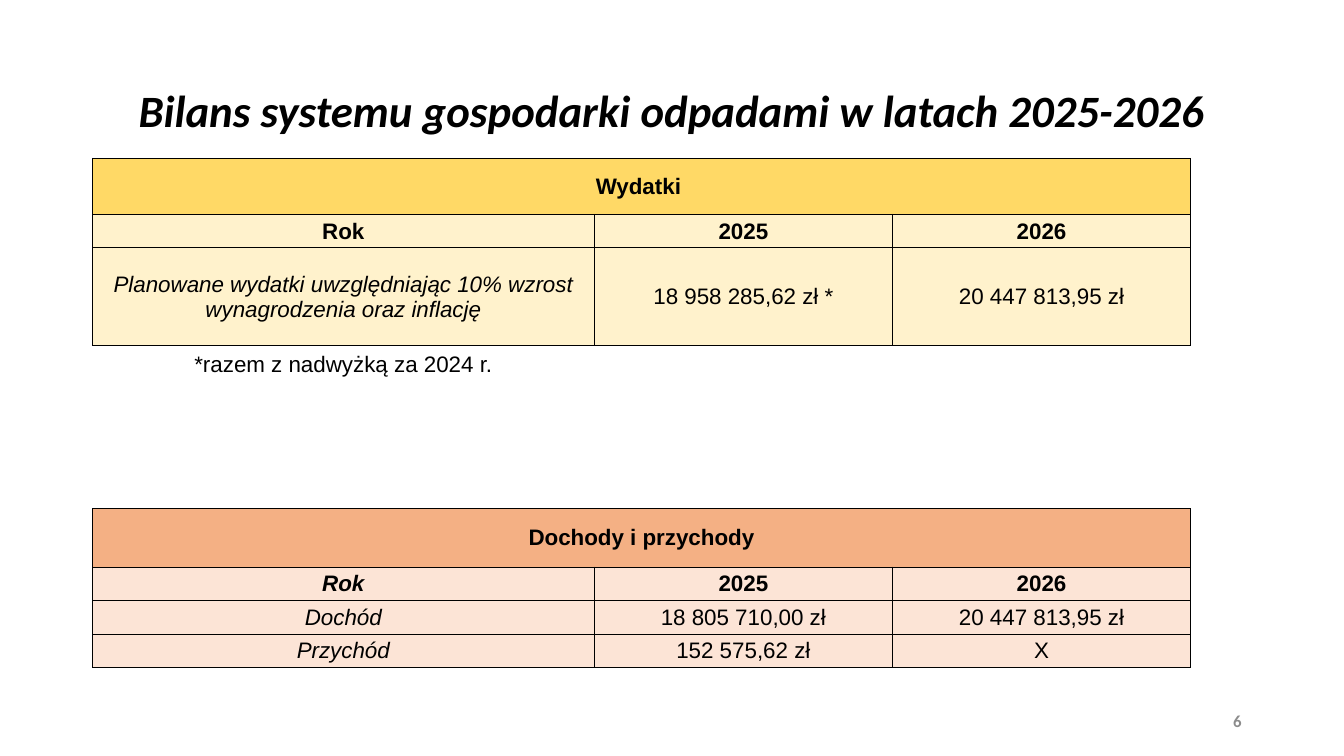
from lxml import etree
from pptx import Presentation
from pptx.dml.color import RGBColor
from pptx.enum.text import MSO_ANCHOR, PP_ALIGN
from pptx.oxml.ns import qn
from pptx.util import Pt

MIDDLE = MSO_ANCHOR.MIDDLE
CENTER, RIGHT = PP_ALIGN.CENTER, PP_ALIGN.RIGHT

BLACK, GREY = "000000", "8C8C8C"
GOLD, CREAM = "FFD966", "FFF2CC"
ORANGE, PEACH = "F4B084", "FCE4D6"

COLUMN_WIDTHS = (358.5, 213, 213)
LINE_HEIGHT = 24
FOOTNOTE_ROW = 3

# Each row: height, fill, font style (b bold, i italic) per cell, texts
BALANCE_ROWS = [
    (40, GOLD, ("b",), ("Wydatki ",)),
    (LINE_HEIGHT, CREAM, ("b", "b", "b"), ("Rok", "2025", "2026")),
    (69.5, CREAM, ("i", "", ""),
     ("Planowane wydatki uwzględniając 10% wzrost wynagrodzenia oraz inflację",
      "18 958 285,62 zł *", "20 447 813,95 zł")),
    (45, None, ("", "", ""), ("*razem z nadwyżką za 2024 r.", "", "")),
    *[(LINE_HEIGHT, None, ("", "", ""), ("", "", ""))] * 3,
    (41.5, ORANGE, ("b",), ("Dochody i przychody",)),
    (LINE_HEIGHT, PEACH, ("bi", "b", "b"), ("Rok", "2025", "2026")),
    (LINE_HEIGHT, PEACH, ("i", "", ""),
     ("Dochód", "18 805 710,00 zł", "20 447 813,95 zł")),
    (LINE_HEIGHT, PEACH, ("i", "", ""), ("Przychód", "152 575,62 zł", "X")),
]


def rgb(color):
    return RGBColor.from_string(color)


def write(frame, text, size, font_name, color, style="", align=CENTER):
    paragraph = frame.paragraphs[0]
    if text:
        paragraph.add_run().text = text
    paragraph.alignment = align
    font = paragraph.font
    font.size, font.name = Pt(size), font_name
    font.bold, font.italic = "b" in style, "i" in style
    font.color.rgb = rgb(color)
    return paragraph


def add_label(slide, box, text, size, color, style, align):
    frame = slide.shapes.add_textbox(*map(Pt, box)).text_frame
    frame.word_wrap = True
    frame.vertical_anchor = MIDDLE
    return write(frame, text, size, "Calibri", color, style, align)


def set_borders(cell, lined_sides):
    """Draw thin black lines on the given sides (of L, R, T, B), none elsewhere."""
    properties = cell._tc.get_or_add_tcPr()
    for side in "LRTB":
        line = etree.SubElement(properties, qn(f"a:ln{side}"), w=str(Pt(0.5)))
        if side in lined_sides:
            fill = etree.SubElement(line, qn("a:solidFill"))
            etree.SubElement(fill, qn("a:srgbClr"), val=BLACK)
        else:
            etree.SubElement(line, qn("a:noFill"))


def border_sides(row_index):
    """Filled rows are boxed; blank rows only touch the boxes next to them."""
    if BALANCE_ROWS[row_index][1]:
        return "LRTB"
    above, below = BALANCE_ROWS[row_index - 1][1], BALANCE_ROWS[row_index + 1][1]
    return ("T" if above else "") + ("B" if below else "")


def format_cell(cell, fill, sides):
    cell.margin_left = cell.margin_right = cell.margin_top = Pt(0.7)
    cell.margin_bottom = 0
    cell.vertical_anchor = MIDDLE
    set_borders(cell, sides)
    if fill:
        cell.fill.solid()
        cell.fill.fore_color.rgb = rgb(fill)
    else:
        cell.fill.background()


def add_balance_table(slide, left, top):
    height = sum(row[0] for row in BALANCE_ROWS)
    table = slide.shapes.add_table(
        len(BALANCE_ROWS), len(COLUMN_WIDTHS), Pt(left), Pt(top),
        Pt(sum(COLUMN_WIDTHS)), Pt(height)).table
    table.first_row = table.horz_banding = False
    for column, width in zip(table.columns, COLUMN_WIDTHS):
        column.width = Pt(width)

    for index, (row_height, fill, styles, texts) in enumerate(BALANCE_ROWS):
        row = table.rows[index]
        row.height = Pt(row_height)
        for cell in row.cells:
            format_cell(cell, fill, border_sides(index))
        if len(texts) == 1:
            row.cells[0].merge(row.cells[len(COLUMN_WIDTHS) - 1])
        for cell, text, style in zip(row.cells, texts, styles):
            write(cell.text_frame, text, 16, "Arial", BLACK, style)

    # The footnote sits close under the expenses box
    table.cell(FOOTNOTE_ROW, 0).margin_bottom = Pt(18)


def main():
    presentation = Presentation()
    presentation.slide_width, presentation.slide_height = Pt(960), Pt(540)
    slide = presentation.slides.add_slide(presentation.slide_layouts[6])

    title = add_label(slide, (66, 28.75, 828, 104.4),
                      "Bilans systemu gospodarki odpadami w latach 2025-2026",
                      32, BLACK, "bi", CENTER)
    title.line_spacing = 0.9
    add_balance_table(slide, 66, 113)
    add_label(slide, (678, 500.5, 216, 28.75), "6", 12, GREY, "b", RIGHT)

    presentation.save("out.pptx")


if __name__ == "__main__":
    main()
